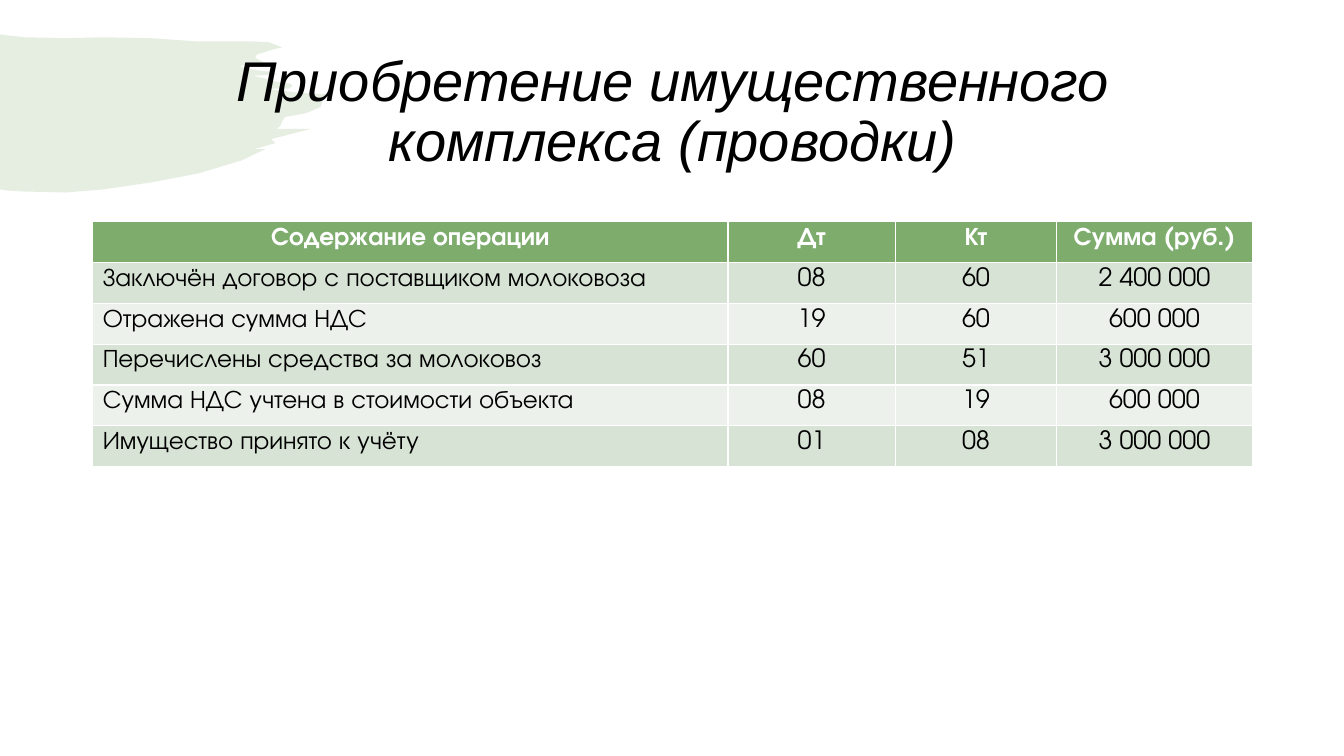
from lxml.etree import SubElement
from pptx import Presentation
from pptx.dml.color import RGBColor
from pptx.enum.text import MSO_ANCHOR, PP_ALIGN
from pptx.oxml.ns import qn
from pptx.util import Inches, Pt

GREEN, SAGE, MIST = "7DAC6C", "D7E3D4", "ECF1EB"
BLACK, WHITE = "000000", "FFFFFF"


def paint(color_format, hex_color):
    color_format.rgb = RGBColor.from_string(hex_color)


def write(frame, text, size=18, font="TeX Gyre Adventor", color=BLACK, bold=False,
          italic=False, align=PP_ALIGN.CENTER, spacing=1.0):
    paragraph = frame.paragraphs[0]
    paragraph.alignment = align
    paragraph.line_spacing = spacing
    run = paragraph.add_run()
    run.text = text
    run.font.size, run.font.name = Pt(size), font
    run.font.bold, run.font.italic = bold, italic
    paint(run.font.color, color)


deck = Presentation()
deck.slide_width, deck.slide_height = Inches(13.33), Inches(7.5)
slide = deck.slides.add_slide(deck.slide_layouts[6])

# Brush stroke in the top left corner, in hundredths of an inch
stroke_outline = [
    (0, 34), (6, 35), (25, 37), (66, 38), (102, 37), (151, 38), (194, 41), (248, 41),
    (267, 42), (280, 47), (271, 49), (255, 54), (253, 57), (256, 59), (262, 62),
    (248, 62), (238, 66), (246, 68), (256, 70), (266, 71), (275, 74), (251, 75),
    (263, 78), (273, 81), (280, 82), (288, 83), (290, 85), (287, 88), (284, 88),
    (263, 88), (296, 92), (330, 94), (321, 97), (318, 106), (307, 111), (300, 113),
    (283, 116), (280, 120), (278, 125), (274, 128), (308, 128), (269, 138),
    (273, 142), (252, 148), (263, 148), (240, 159), (197, 172), (150, 181),
    (102, 188), (65, 191), (23, 190), (7, 189), (0, 188),
]
builder = slide.shapes.build_freeform(*stroke_outline[0], scale=Inches(0.01))
builder.add_line_segments(stroke_outline[1:], close=True)
brush_stroke = builder.convert_to_shape()
brush_stroke.shadow.inherit = False
brush_stroke.line.fill.background()
brush_stroke.fill.solid()
paint(brush_stroke.fill.fore_color, GREEN)
stroke_color = brush_stroke.fill._xPr.find(f".//{qn('a:srgbClr')}")
SubElement(stroke_color, qn("a:alpha"), val="20000")

# Title, on the same left edge and width as the table
left, width = Inches(0.92), Inches(11.5)
heading = slide.shapes.add_textbox(left, Inches(0.4), width, Inches(1.45)).text_frame
heading.word_wrap = True
heading.vertical_anchor = MSO_ANCHOR.MIDDLE
write(heading, "Приобретение имущественного комплекса (проводки)",
      size=40, font="Arial", italic=True, spacing=0.9)

# Accounting entries
entries = [
    ("Содержание операции", "Дт", "Кт", "Сумма (руб.)"),
    ("Заключён договор с поставщиком молоковоза", "08", "60", "2 400 000"),
    ("Отражена сумма НДС", "19", "60", "600 000"),
    ("Перечислены средства за молоковоз", "60", "51", "3 000 000"),
    ("Сумма НДС учтена в стоимости объекта", "08", "19", "600 000"),
    ("Имущество принято к учёту", "01", "08", "3 000 000"),
]
column_widths = [6.3, 1.66, 1.6, 1.94]
ledger = slide.shapes.add_table(len(entries), len(column_widths), left, Inches(2.2),
                                width, Inches(2.43)).table
for column, column_width in zip(ledger.columns, column_widths):
    column.width = Inches(column_width)

for row, entry in enumerate(entries):
    header = row == 0
    band = GREEN if header else SAGE if row % 2 else MIST
    for col, text in enumerate(entry):
        cell = ledger.cell(row, col)
        cell.fill.solid()
        paint(cell.fill.fore_color, band)
        write(cell.text_frame, text, bold=header, color=WHITE if header else BLACK,
              align=PP_ALIGN.CENTER if header or col else PP_ALIGN.LEFT)

deck.save("out.pptx")
